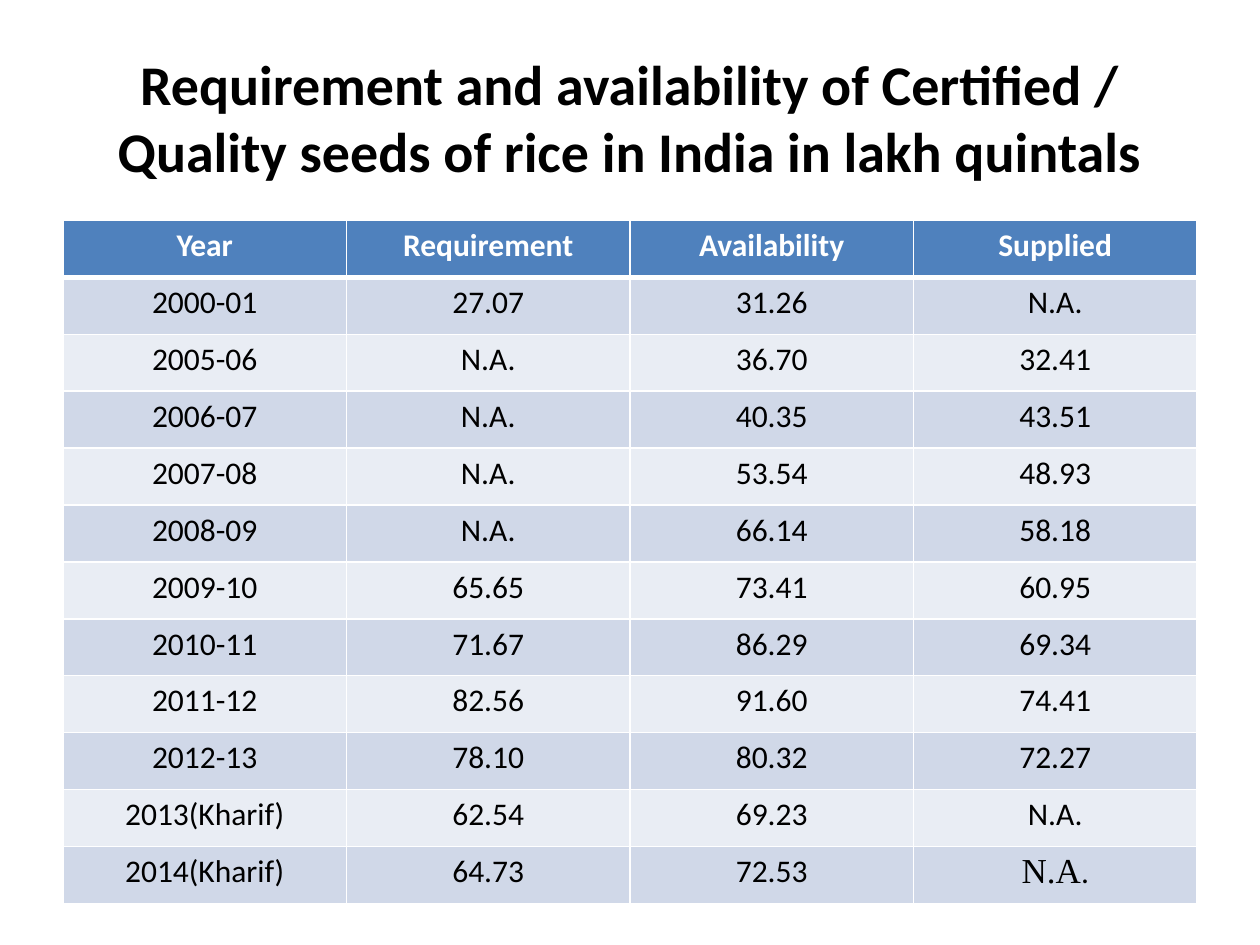
from lxml import etree
from pptx import Presentation
from pptx.dml.color import RGBColor
from pptx.enum.text import MSO_ANCHOR, PP_ALIGN
from pptx.oxml.ns import qn
from pptx.util import Inches, Pt

CENTER = PP_ALIGN.CENTER
MIDDLE = MSO_ANCHOR.MIDDLE

BLACK = RGBColor(0x00, 0x00, 0x00)
WHITE = RGBColor(0xFF, 0xFF, 0xFF)
BLUE = RGBColor(0x4F, 0x81, 0xBD)
BANDS = (RGBColor(0xE9, 0xED, 0xF4), RGBColor(0xD0, 0xD8, 0xE8))

TITLE = ("Requirement and availability of Certified / "
         "Quality seeds of rice in India in lakh quintals")
HEADS = ("Year", "Requirement", "Availability", "Supplied")
SEEDS = (
    ("2000-01", "27.07", "31.26", "N.A."),
    ("2005-06", "N.A.", "36.70", "32.41"),
    ("2006-07", "N.A.", "40.35", "43.51"),
    ("2007-08", "N.A.", "53.54", "48.93"),
    ("2008-09", "N.A.", "66.14", "58.18"),
    ("2009-10", "65.65", "73.41", "60.95"),
    ("2010-11", "71.67", "86.29", "69.34"),
    ("2011-12", "82.56", "91.60", "74.41"),
    ("2012-13", "78.10", "80.32", "72.27"),
    ("2013(Kharif)", "62.54", "69.23", "N.A."),
    ("2014(Kharif)", "64.73", "72.53", ""),
)


def write(para, text, size=18, font="Calibri", color=BLACK, bold=False):
    """Add one centred run to a paragraph."""
    para.alignment = CENTER
    run = para.add_run()
    run.text = text
    run.font.size = Pt(size)
    run.font.name = font
    run.font.color.rgb = color
    run.font.bold = bold


def edge(cell, side, width):
    """Draw one white border; call before the cell is filled."""
    props = cell._tc.get_or_add_tcPr()
    line = etree.SubElement(props, qn(f"a:ln{side}"), w=str(Pt(width)))
    fill = etree.SubElement(line, qn("a:solidFill"))
    etree.SubElement(fill, qn("a:srgbClr"), val=str(WHITE))


class Deck:
    """Holds the slide and its margins; tops and heights are in inches."""

    left, width = Inches(0.5), Inches(9)

    def __init__(self):
        self.file = Presentation()
        self.file.slide_width = Inches(10)
        self.file.slide_height = Inches(7.5)
        self.slide = self.file.slides.add_slide(self.file.slide_layouts[6])

    def title(self, text, top, height):
        box = self.slide.shapes.add_textbox(
            self.left, Inches(top), self.width, Inches(height))
        frame = box.text_frame
        frame.word_wrap = True
        frame.vertical_anchor = MIDDLE
        write(frame.paragraphs[0], text, size=32, bold=True)

    def table(self, rows, top, height):
        grid = self.slide.shapes.add_table(
            len(rows), len(rows[0]), self.left, Inches(top),
            self.width, Inches(height)).table
        for r, row in enumerate(rows):
            for c, text in enumerate(row):
                self.cell(grid.cell(r, c), text, r)
        return grid

    def cell(self, cell, text, row):
        head = row == 0
        for side in "LRTB":
            thick = (row, side) in ((0, "B"), (1, "T"))
            edge(cell, side, 3 if thick else 1)
        cell.fill.solid()
        cell.fill.fore_color.rgb = BLUE if head else BANDS[row % 2]
        if text:
            write(cell.text_frame.paragraphs[0], text,
                  color=WHITE if head else BLACK, bold=head)


def main():
    deck = Deck()
    deck.title(TITLE, 0.3, 1.25)
    grid = deck.table((HEADS,) + SEEDS, 1.75, 5.42)
    last = grid.cell(len(SEEDS), len(HEADS) - 1).text_frame.paragraphs[0]
    write(last, "N.A", size=20, font="Times New Roman")
    write(last, ".")
    deck.file.save("out.pptx")


if __name__ == "__main__":
    main()
